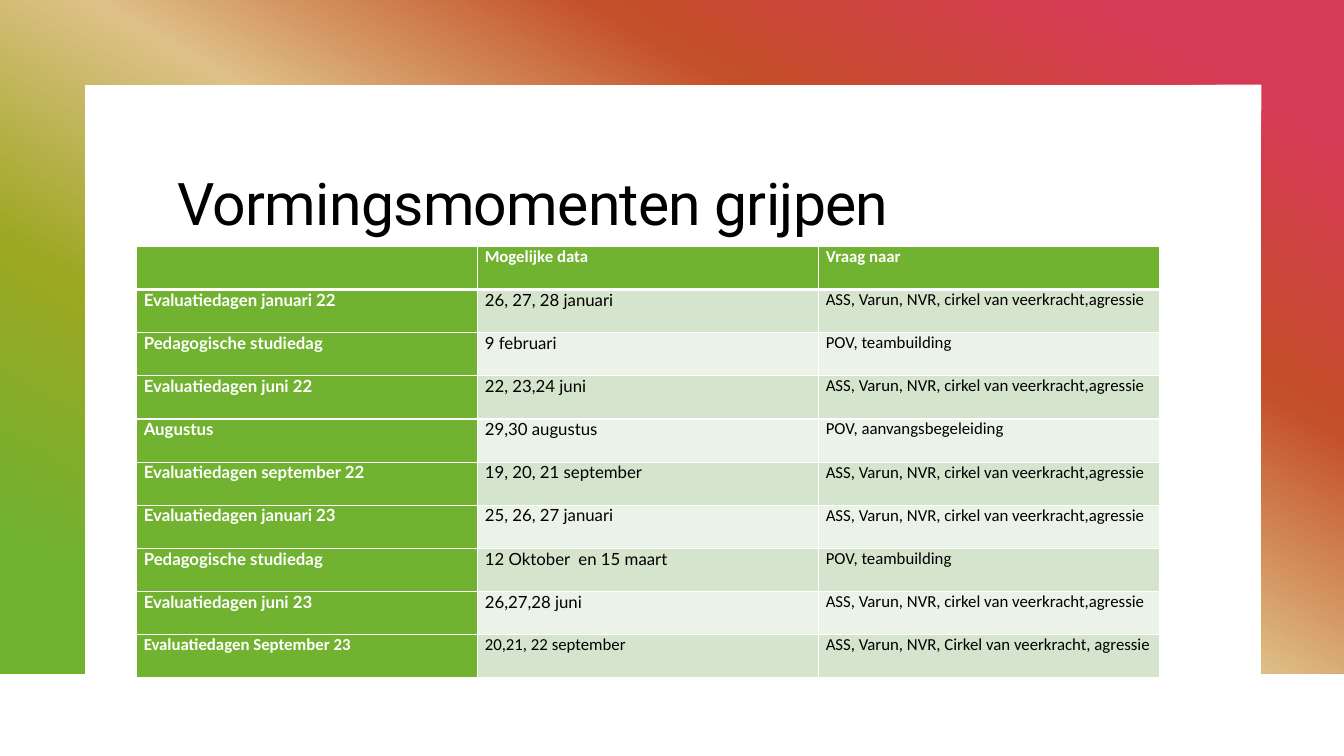
from dataclasses import dataclass

from lxml.etree import SubElement
from pptx import Presentation
from pptx.dml.color import RGBColor
from pptx.enum.text import MSO_ANCHOR, MSO_AUTO_SIZE, PP_ALIGN
from pptx.oxml import parse_xml
from pptx.oxml.ns import nsdecls, qn
from pptx.util import Inches, Pt

LEFT = PP_ALIGN.LEFT
TOP = MSO_ANCHOR.TOP
FIXED = MSO_AUTO_SIZE.NONE
TITLE_ONLY = 5


@dataclass(frozen=True)
class Theme:
    green: str = "71B230"
    band_dark: str = "D5E4CD"
    band_light: str = "EBF2E8"
    white: str = "FFFFFF"
    black: str = "000000"
    frame_stops: tuple = ((10, "D63A54"), (30, "C44F28"), (50, "DEC187"),
                          (70, "9CA722"), (90, "71B230"))
    frame_angle: int = 120
    title_font: str = "Roboto"
    label_font: str = "Lato"
    body_font: str = "Calibri"
    title_size: int = 42
    body_size: int = 12
    thin: int = 1
    thick: int = 3


def write_text(frame, text, *, font, size, color, bold=False, line_spacing=None, tracking=None):
    para = frame.paragraphs[0]
    para.alignment = LEFT
    if line_spacing is not None:
        para.line_spacing = line_spacing
    span = para.add_run()
    span.text = text
    span.font.name = font
    span.font.size = Pt(size)
    span.font.bold = bold
    span.font.color.rgb = RGBColor.from_string(color)
    if tracking is not None:
        span.font._element.set("spc", str(round(tracking * 100)))


class SlideBuilder:
    COLUMNS = 40
    ROWS = 30

    def __init__(self, deck, theme):
        self.theme = theme
        self.column = deck.slide_width / self.COLUMNS
        self.row = deck.slide_height / self.ROWS
        self.page = deck.slides.add_slide(deck.slide_layouts[TITLE_ONLY])

    def x(self, columns):
        return round(columns * self.column)

    def y(self, rows):
        return round(rows * self.row)

    def frame(self, left, top, right, bottom):
        outline = [(0, 0), (self.COLUMNS, 0), (self.COLUMNS, bottom), (right, bottom),
                   (right, top), (left, top), (left, bottom), (0, bottom)]
        points = [(self.x(column), self.y(row)) for column, row in outline]
        builder = self.page.shapes.build_freeform(*points[0])
        builder.add_line_segments(points[1:], close=True)
        shape = builder.convert_to_shape()
        shape.shadow.inherit = False
        shape.line.fill.background()
        shape.fill.background()
        stops = "".join(f'<a:gs pos="{share * 1000}"><a:srgbClr val="{color}"/></a:gs>'
                        for share, color in self.theme.frame_stops)
        gradient = parse_xml(
            f'<a:gradFill {nsdecls("a")} rotWithShape="1"><a:gsLst>{stops}</a:gsLst>'
            f'<a:lin ang="{self.theme.frame_angle * 60000}" scaled="0"/></a:gradFill>')
        properties = shape._element.spPr
        properties.replace(properties.find(qn("a:noFill")), gradient)
        self.page.shapes._spTree.insert(2, shape._element)

    def title(self, text, left, top, width, height):
        box = self.page.shapes.title
        box.left, box.top = self.x(left), self.y(top)
        box.width, box.height = self.x(width), self.y(height)
        box.text_frame.auto_size = FIXED
        box.text_frame.word_wrap = True
        box.text_frame.vertical_anchor = TOP
        write_text(box.text_frame, text, font=self.theme.title_font, size=self.theme.title_size,
                   color=self.theme.black, line_spacing=0.95, tracking=-0.5)

    def table(self, records, left, top, width, height):
        graphic = self.page.shapes.add_table(len(records), len(records[0]), self.x(left),
                                             self.y(top), self.x(width), self.y(height))
        table = graphic.table
        last = len(records) - 1
        for row, record in enumerate(records):
            for column, text in enumerate(record):
                cell = table.cell(row, column)
                accent = row == 0 or column == 0
                band = self.theme.band_dark if row % 2 else self.theme.band_light
                is_label = column < 2 and 0 < row < last
                self.cell(cell, text, fill=self.theme.green if accent else band,
                          font=self.theme.label_font if is_label else self.theme.body_font,
                          color=self.theme.white if accent else self.theme.black, bold=accent)
                self.borders(cell, top=self.theme.thick if row == 1 else self.theme.thin,
                             bottom=self.theme.thick if row == 0 else self.theme.thin)

    def cell(self, cell, text, *, fill, font, color, bold):
        cell.margin_left = cell.margin_right = Inches(0.07)
        cell.margin_top = cell.margin_bottom = 0
        cell.vertical_anchor = TOP
        cell.fill.solid()
        cell.fill.fore_color.rgb = RGBColor.from_string(fill)
        write_text(cell.text_frame, text, font=font, size=self.theme.body_size,
                   color=color, bold=bold)

    def borders(self, cell, top, bottom):
        properties = cell._tc.get_or_add_tcPr()
        weights = {"lnL": self.theme.thin, "lnR": self.theme.thin, "lnT": top, "lnB": bottom}
        for position, (side, weight) in enumerate(weights.items()):
            line = SubElement(properties, qn(f"a:{side}"), w=str(Pt(weight)))
            solid = SubElement(line, qn("a:solidFill"))
            SubElement(solid, qn("a:srgbClr"), val=self.theme.white)
            properties.insert(position, line)


COMMON = "ASS, Varun, NVR, cirkel van veerkracht,agressie"
TEAM = "POV, teambuilding"
TRAINING = [
    ("", "Mogelijke data", "Vraag naar"),
    ("Evaluatiedagen januari 22", "26, 27, 28 januari", COMMON),
    ("Pedagogische studiedag", "9 februari", TEAM),
    ("Evaluatiedagen juni 22", "22, 23,24 juni", COMMON),
    ("Augustus", "29,30 augustus", "POV, aanvangsbegeleiding"),
    ("Evaluatiedagen september 22", "19, 20, 21 september", COMMON),
    ("Evaluatiedagen januari 23", "25, 26, 27 januari", COMMON),
    ("Pedagogische studiedag", "12 Oktober  en 15 maart", TEAM),
    ("Evaluatiedagen juni 23", "26,27,28 juni", COMMON),
    ("Evaluatiedagen September 23", "20,21, 22 september",
     "ASS, Varun, NVR, Cirkel van veerkracht, agressie"),
]


def main():
    deck = Presentation()
    deck.slide_width, deck.slide_height = Inches(13.33), Inches(7.5)
    builder = SlideBuilder(deck, Theme())
    builder.frame(left=2.52, top=3.36, right=37.54, bottom=26.72)
    builder.title("Vormingsmomenten grijpen", left=4.98, top=6.64, width=30, height=5.88)
    builder.table(TRAINING, left=4.07, top=9.78, width=30.45, height=17.12)
    deck.save("out.pptx")


if __name__ == "__main__":
    main()
